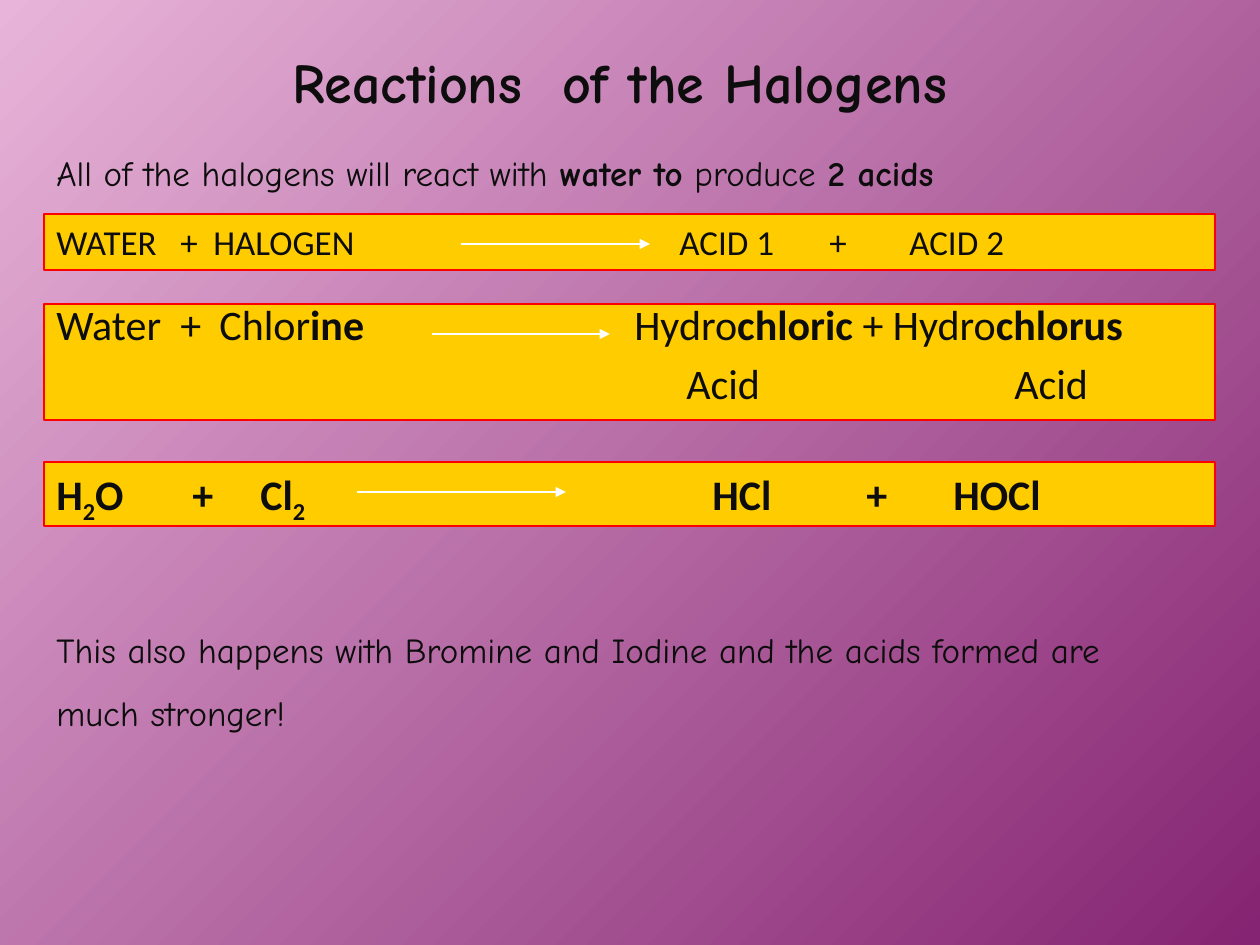
"""Build a slide on how the halogens react with water."""
from dataclasses import dataclass

from lxml import etree
from pptx import Presentation, util as u
from pptx.dml.color import RGBColor
from pptx.enum import shapes, text
from pptx.oxml import ns

SCALE = 914400 / 126
HEX = {"ink": "0D0D0D", "gold": "FFCC00", "edge": "FF0000", "arrow": "FFFFFF",
       "light": "E8B4D9", "dark": "852472"}
HAND, PLAIN = "Comic Neue", "Calibri"
LEFT, WIDTH = 44, 1171


@dataclass
class Span:
    words: str
    bold: bool = False
    sub: bool = False


@dataclass
class Para:
    spans: list[Span]
    tabs: tuple[int, ...] = ()


@dataclass
class Band:
    top: int
    height: int
    size: int
    paras: list[Para]
    start: int
    end: int
    level: int
    space: float = 1.0


BANDS = [
    Band(214, 56, 20, [
        Para([Span("WATER\t+\tHALOGEN\tACID 1\t+\tACID 2")],
             (124, 157, 623, 773, 853)),
    ], 461, 650, 244),
    Band(304, 116, 24, [
        Para([Span("Water\t+\tChlor"), Span("ine", True), Span("\tHydro"),
              Span("chloric ", True), Span("+ Hydro"), Span("chlorus", True)],
             (124, 163, 578)),
        Para([Span("\tAcid\tAcid")], (630, 958)),
    ], 432, 610, 334, 0.75),
    Band(462, 64, 24, [
        Para([Span("H", True), Span("2", True, True), Span("O\t+\tCl", True),
              Span("2", True, True), Span("\tHCl\t+\tHOCl", True)],
             (136, 204, 656, 810, 897)),
    ], 357, 566, 492),
]


def px(num: int) -> u.Emu:
    return u.Emu(round(num * SCALE))


def rgb(name: str) -> RGBColor:
    return RGBColor.from_string(HEX[name])


def style(font, face: str, size: int, bold: bool = False) -> None:
    font.name, font.size, font.bold = face, u.Pt(size), bold
    font.color.rgb = rgb("ink")


def write(frame, paras: list[Para], face: str, size: int,
          space: float = 1.0) -> None:
    frame.word_wrap = True
    frame.vertical_anchor = text.MSO_ANCHOR.TOP
    for i, para in enumerate(paras):
        line = frame.add_paragraph() if i else frame.paragraphs[0]
        line.alignment = text.PP_ALIGN.LEFT
        line.line_spacing = space
        line.space_before = u.Pt(size / 2 if i else 0)
        if para.tabs:
            stops = etree.SubElement(line._p.get_or_add_pPr(), ns.qn("a:tabLst"))
            for tab in para.tabs:
                etree.SubElement(stops, ns.qn("a:tab"), pos=str(px(tab)), algn="l")
        for span in para.spans:
            run = line.add_run()
            run.text = span.words
            style(run.font, face, size, span.bold)
            if span.sub:
                run.font._element.set("baseline", "-25000")


def add_note(slide, top: int, width: int, height: int, spans: list[Span],
             space: float = 1.0) -> None:
    box = slide.shapes.add_textbox(px(LEFT), px(top), px(width), px(height))
    write(box.text_frame, [Para(spans)], HAND, 20, space)


def add_arrow(group, start: int, end: int, level: int) -> None:
    arrow = group.shapes.add_connector(
        shapes.MSO_CONNECTOR.STRAIGHT, px(start), px(level), px(end), px(level))
    arrow.line.color.rgb = rgb("arrow")
    arrow.line.width = u.Pt(0.75)
    etree.SubElement(arrow.line._get_or_add_ln(), ns.qn("a:tailEnd"), type="triangle")
    etree.SubElement(arrow._element.spPr, ns.qn("a:effectLst"))


def add_band(slide, band: Band) -> None:
    group = slide.shapes.add_group_shape()
    box = group.shapes.add_shape(
        shapes.MSO_SHAPE.RECTANGLE, px(LEFT), px(band.top), px(WIDTH), px(band.height))
    box.shadow.inherit = False
    box.fill.solid()
    box.fill.fore_color.rgb = rgb("gold")
    box.line.color.rgb = rgb("edge")
    box.line.width = u.Pt(0.75)
    write(box.text_frame, band.paras, PLAIN, band.size, band.space)
    add_arrow(group, band.start, band.end, band.level)


def add_title(slide, words: str) -> None:
    title = slide.shapes.title
    title.left, title.top, title.width, title.height = map(px, (53, 38, 1134, 87))
    frame = title.text_frame
    frame.text = words
    frame.auto_size = text.MSO_AUTO_SIZE.NONE
    frame.vertical_anchor = text.MSO_ANCHOR.MIDDLE
    frame.paragraphs[0].alignment = text.PP_ALIGN.CENTER
    style(frame.paragraphs[0].runs[0].font, HAND, 32, True)


def paint(slide) -> None:
    fill = slide.background.fill
    fill.gradient()
    fill.gradient_angle = 315
    for stop, name in zip(fill.gradient_stops, ("light", "dark")):
        stop.color.rgb = rgb(name)


def main() -> None:
    deck = Presentation()
    deck.slide_width, deck.slide_height = px(1260), px(945)
    slide = deck.slides.add_slide(deck.slide_layouts[5])
    paint(slide)
    add_title(slide, "Reactions  of the Halogens")
    add_note(slide, 145, 1131, 54, [
        Span("All of the halogens will react with "), Span("water to", True),
        Span(" produce "), Span("2 acids", True)])
    for band in BANDS:
        add_band(slide, band)
    add_note(slide, 601, 1160, 139, [
        Span("This also happens with Bromine and Iodine and the acids formed "
             "are much stronger!")], 1.5)
    deck.save("out.pptx")


if __name__ == "__main__":
    main()
